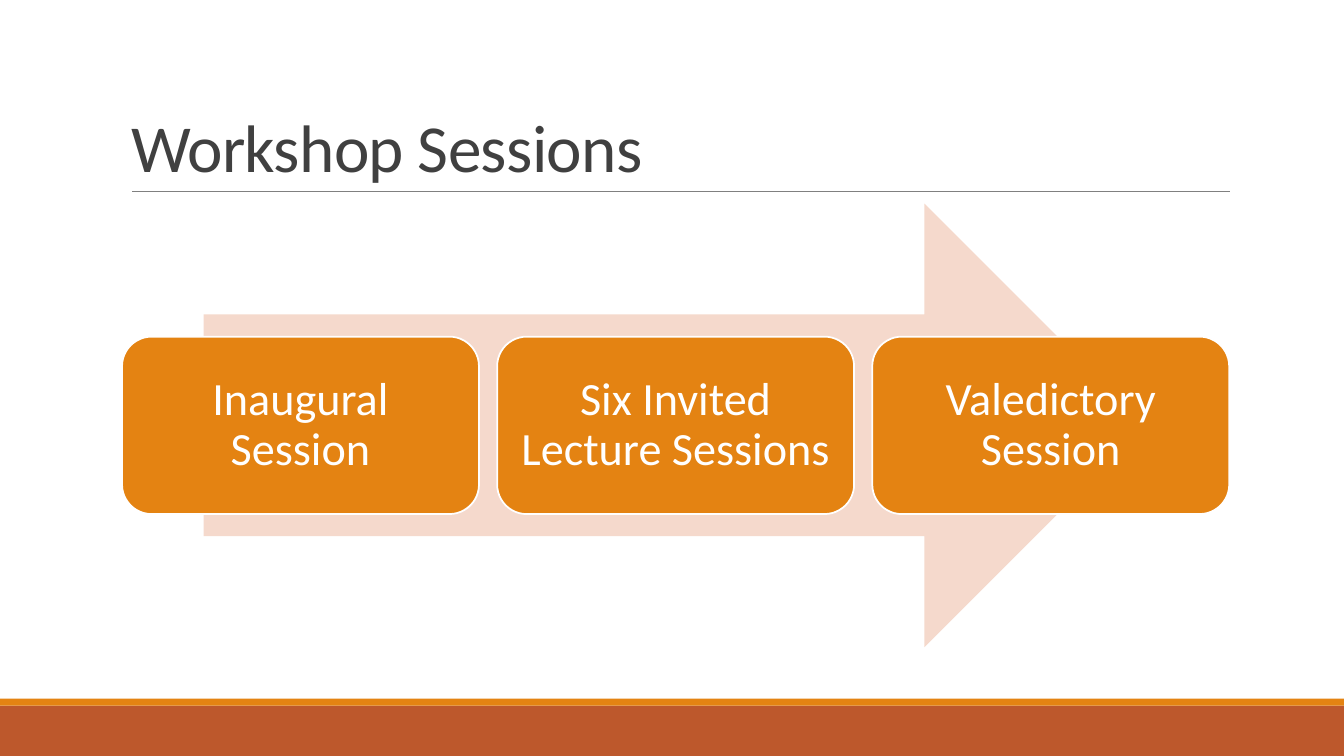
"""Build the Workshop Sessions slide: three session boxes on a broad arrow."""
from pptx import Presentation
from pptx import util as u
from pptx.dml.color import RGBColor
from pptx.enum import shapes, text
from pptx.oxml.ns import qn

COLOURS = {
    "rust": "BD582C",
    "orange": "E48312",
    "blush": "F5D9CC",
    "rule": "808080",
    "title": "404040",
    "white": "FFFFFF",
}
SESSIONS = ["Inaugural Session", "Six Invited Lecture Sessions", "Valedictory Session"]


def colour(name):
    return RGBColor.from_string(COLOURS[name])


def write(frame, words, *, font, size, fill, align, anchor, line_spacing, inset=None, tracking=None):
    frame.word_wrap = True
    frame.auto_size = text.MSO_AUTO_SIZE.NONE
    frame.vertical_anchor = anchor
    if inset is not None:
        frame.margin_left = frame.margin_right = u.Inches(inset)
        frame.margin_top = frame.margin_bottom = u.Inches(inset)
    paragraph = frame.paragraphs[0]
    paragraph.alignment = align
    paragraph.line_spacing = line_spacing
    run = paragraph.add_run()
    run.text = words
    run.font.name = font
    run.font.size = u.Pt(size)
    run.font.color.rgb = colour(fill)
    if tracking is not None:
        run.font._element.set("spc", str(int(tracking * 100)))


class SlideBuilder:
    """Hold the style and the slide; lengths are percentages of the slide's size."""

    font = "Calibri"

    def __init__(self, presentation):
        self.width = presentation.slide_width
        self.height = presentation.slide_height
        self.slide = presentation.slides.add_slide(presentation.slide_layouts[5])

    def place(self, left, top, width, height):
        return (
            round(self.width * left / 100),
            round(self.height * top / 100),
            round(self.width * width / 100),
            round(self.height * height / 100),
        )

    def title(self, words, *area):
        title = self.slide.shapes.title
        title.left, title.top, title.width, title.height = self.place(*area)
        write(title.text_frame, words, font=self.font, size=48, fill="title",
              align=text.PP_ALIGN.LEFT, anchor=text.MSO_ANCHOR.BOTTOM,
              line_spacing=0.85, tracking=-0.5)

    def block(self, kind, fill, *area):
        shape = self.slide.shapes.add_shape(kind, *self.place(*area))
        shape.shadow.inherit = False
        shape.fill.solid()
        shape.fill.fore_color.rgb = colour(fill)
        shape.line.fill.background()
        return shape

    def session(self, words, *area):
        shape = self.block(shapes.MSO_SHAPE.ROUNDED_RECTANGLE, "orange", *area)
        shape.line.color.rgb = colour("white")
        shape.line.width = u.Pt(1.25)
        write(shape.text_frame, words, font=self.font, size=33, fill="white",
              align=text.PP_ALIGN.CENTER, anchor=text.MSO_ANCHOR.MIDDLE,
              line_spacing=0.9, inset=0.14)

    def rule(self, left, top, width):
        x, y, length, _ = self.place(left, top, width, 0)
        line = self.slide.shapes.add_connector(shapes.MSO_CONNECTOR.STRAIGHT, x, y, x + length, y)
        line.line.color.rgb = colour("rule")
        line.line.width = u.Pt(0.5)
        properties = line._element.spPr
        properties.append(properties.makeelement(qn("a:effectLst"), {}))


def main():
    presentation = Presentation()
    presentation.slide_width = u.Inches(13.33)
    presentation.slide_height = u.Inches(7.5)
    builder = SlideBuilder(presentation)

    builder.block(shapes.MSO_SHAPE.RECTANGLE, "rust", 0, 93.33, 100, 6.67)
    builder.block(shapes.MSO_SHAPE.RECTANGLE, "orange", 0, 92.4, 100, 0.93)
    builder.rule(9.83, 25.33, 81.7)
    builder.title("Workshop Sessions", 9, 4.13, 82.5, 21.2)

    builder.block(shapes.MSO_SHAPE.RIGHT_ARROW, "blush", 15.15, 26.93, 70.14, 58.67)
    box_width, gap = 26.56, 1.35
    for index, words in enumerate(SESSIONS):
        builder.session(words, 9.08 + index * (box_width + gap), 44.53, box_width, 23.47)

    presentation.save("out.pptx")


if __name__ == "__main__":
    main()
